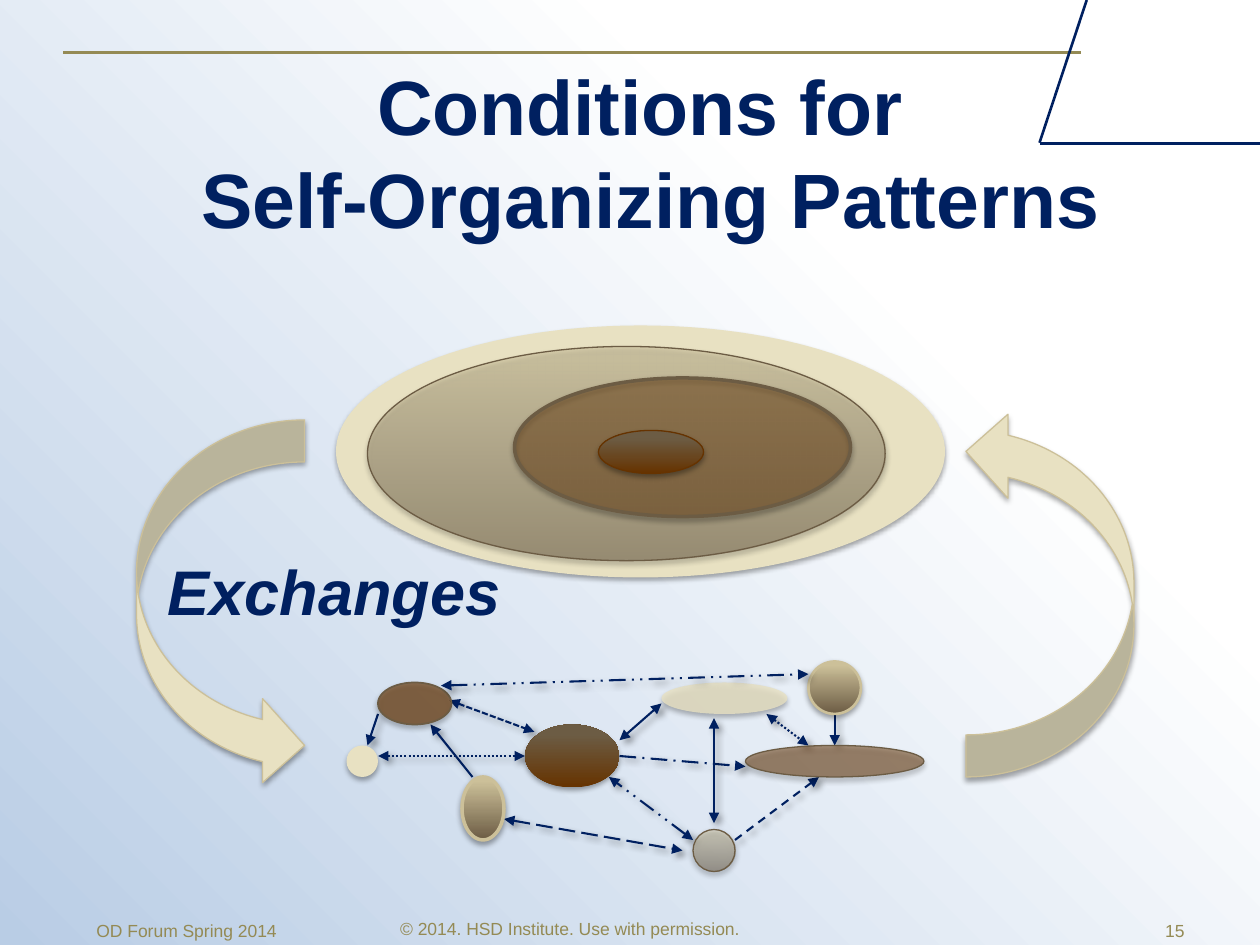
from pptx import Presentation
from pptx.dml.color import RGBColor
from pptx.enum.dml import MSO_LINE
from pptx.enum.shapes import MSO_CONNECTOR, MSO_SHAPE
from pptx.enum.text import MSO_ANCHOR, MSO_AUTO_SIZE, PP_ALIGN
from pptx.oxml import parse_xml
from pptx.oxml.ns import nsdecls
from pptx.util import Inches, Pt

OVAL, ARROW = MSO_SHAPE.OVAL, MSO_SHAPE.CURVED_RIGHT_ARROW
STRAIGHT = MSO_CONNECTOR.STRAIGHT
LEFT, CENTER, RIGHT = PP_ALIGN.LEFT, PP_ALIGN.CENTER, PP_ALIGN.RIGHT
TOP, MIDDLE = MSO_ANCHOR.TOP, MSO_ANCHOR.MIDDLE
SOLID, DASH, LONG = MSO_LINE.SOLID, MSO_LINE.DASH, MSO_LINE.LONG_DASH
DOT, SHORT = MSO_LINE.ROUND_DOT, MSO_LINE.SQUARE_DOT
LONG_DOT, LONG_DOT_DOT = MSO_LINE.LONG_DASH_DOT, MSO_LINE.DASH_DOT_DOT

COLORS = {
    "navy": "002060", "olive": "948A54", "cream": "E8E1C2", "sand": "CCC099",
    "taupe": "6C5C44", "brown": "663300", "white": "FFFFFF", "sky": "B9CDE5",
    "mist": "E1E8F5", "black": "000000",
}
# Each fill: angle in degrees, then stops of position, colour and opacity in percent.
FILLS = {
    "background": (135, [(0, "white", 100), (29, "white", 100), (100, "sky", 100)]),
    "cream": (0, [(0, "cream", 100)]),
    "pale cream": (0, [(0, "cream", 80)]),
    "light brown": (0, [(0, "brown", 40)]),
    "mid brown": (0, [(0, "brown", 65)]),
    "soft brown": (0, [(0, "brown", 50)]),
    "glass": (270, [(0, "taupe", 50), (94, "sand", 50)]),
    "silver": (270, [(0, "taupe", 50), (94, "sand", 50), (100, "mist", 100)]),
    "bronze": (270, [(0, "taupe", 100), (94, "sand", 100)]),
    "chestnut": (270, [(0, "brown", 100), (84, "taupe", 100)]),
}
# Shadows: opacity in percent, blur and distance in points, angle in degrees.
SHAPE_SHADOW = (35, 3.1, 1.8, 90)
LINE_SHADOW = (40, 4, 3, 45)
CELL = Inches(1) / 12  # the slide is a grid of 120 columns and 90 rows


def drawing_xml(kind, angle=0, stops=(), shadow=None):
    """Return a fill ("fill") or an effect list ("effects") as an XML element."""
    if kind == "effects":
        content = ""
        if shadow:
            opacity, blur, distance, direction = shadow
            content = (
                f'<a:outerShdw blurRad="{Pt(blur)}" dist="{Pt(distance)}" '
                f'dir="{direction * 60000}" rotWithShape="0">'
                f'<a:srgbClr val="{COLORS["black"]}"><a:alpha val="{opacity * 1000}"/>'
                "</a:srgbClr></a:outerShdw>")
        return parse_xml(f'<a:effectLst {nsdecls("a")}>{content}</a:effectLst>')
    colors = [f'<a:srgbClr val="{COLORS[name]}"><a:alpha val="{opacity * 1000}"/></a:srgbClr>'
              for _, name, opacity in stops]
    if len(stops) == 1:
        return parse_xml(f'<a:solidFill {nsdecls("a")}>{colors[0]}</a:solidFill>')
    marks = "".join(f'<a:gs pos="{stop[0] * 1000}">{color}</a:gs>'
                    for stop, color in zip(stops, colors))
    return parse_xml(
        f'<a:gradFill {nsdecls("a")} rotWithShape="1"><a:gsLst>{marks}</a:gsLst>'
        f'<a:lin ang="{angle * 60000}" scaled="0"/></a:gradFill>')


def write_text(shape, text, box, size, color, align=LEFT, anchor=MIDDLE,
               bold=False, italic=False):
    shape.left, shape.top, shape.width, shape.height = [round(n * CELL) for n in box]
    frame = shape.text_frame
    frame.word_wrap = True
    frame.auto_size = MSO_AUTO_SIZE.NONE
    frame.vertical_anchor = anchor
    frame.text = text
    paragraph = frame.paragraphs[0]
    paragraph.alignment = align
    for run in paragraph.runs:
        run.font.name, run.font.size = "Arial", Pt(size)
        run.font.bold, run.font.italic = bold, italic
        run.font.color.rgb = RGBColor.from_string(COLORS[color])


presentation = Presentation()
presentation.slide_width, presentation.slide_height = Inches(10), Inches(7.5)
slide = presentation.slides.add_slide(presentation.slide_layouts[5])

slide.background.fill.solid()
plain_fill = slide.element.find(".//{*}bgPr/{*}solidFill")
plain_fill.getparent().replace(plain_fill, drawing_xml("fill", *FILLS["background"]))

# Lines: start, end, colour, width, dash, arrowheads ("", "end" or "both"), shadow
frame_lines = [
    (start, end, color, width, SOLID, "", None) for start, end, color, width in [
        ((6, 5), (103, 5), "olive", 2.25),
        ((103.5, 0), (99, 13.6), "navy", 1.5),
        ((120, 13.7), (99, 13.7), "navy", 1.5),
    ]]
exchange_lines = [
    (start, end, "navy", 1.2, dash, heads, LINE_SHADOW) for start, end, dash, heads in [
        ((45, 74), (41, 69), SOLID, "end"),
        ((36, 68), (35, 71), SOLID, "end"),
        ((48, 78), (65, 81), LONG, "both"),
        ((73, 68), (77, 71), DOT, "both"),
        ((42.8, 66.7), (50.9, 69.7), SHORT, "both"),
        ((59, 72), (71, 73), LONG_DOT, "end"),
        ((68, 78.4), (68, 68.4), SOLID, "both"),
        ((70, 80), (78, 74), DASH, "end"),
        ((59, 70.5), (63, 67), SOLID, "both"),
        ((79.5, 68), (79.5, 71), SOLID, "end"),
        ((66, 80), (58, 74), LONG_DOT_DOT, "both"),
        ((36, 72), (50, 72), DOT, "both"),
        ((42, 65.3), (77, 64.2), LONG_DOT_DOT, "both"),
    ]]
# Shapes: preset, box, fill, line colour, line width, flipped
containers = [
    (ARROW, (13, 40, 16, 35), "cream", "sand", 0.75, False),
    (OVAL, (32, 31, 58, 24), "cream", None, 0, False),
    (OVAL, (35, 33, 49.3, 20.4), "glass", "taupe", 0.75, False),
    (OVAL, (49, 36, 32, 13.2), "light brown", "taupe", 2, False),
    (OVAL, (57, 41, 10, 4.1), "chestnut", "brown", 0.75, False),
    (ARROW, (92, 39, 16, 35), "cream", "sand", 0.75, True),
]
agents = [
    (OVAL, (33, 71, 3, 3), "cream", None, 0, False),
    (OVAL, (36, 65, 7, 4), "mid brown", "taupe", 1, False),
    (OVAL, (44, 74, 4, 6), "bronze", "sand", 2, False),
    (OVAL, (50, 69, 9, 6), "chestnut", None, 0, False),
    (OVAL, (63, 65, 12, 3), "pale cream", None, 0, False),
    (OVAL, (71, 71, 17, 3), "soft brown", "taupe", 0.75, False),
    (OVAL, (66, 79, 4, 4), "silver", "taupe", 0.75, False),
    (OVAL, (77, 63, 5, 5), "bronze", "sand", 1.5, False),
]

# Back to front: frame, containers, connections, agents, the one line above the agents
for item in frame_lines + containers + exchange_lines[:-1] + agents + exchange_lines[-1:]:
    if item in containers or item in agents:
        preset, box, fill, line_color, width, flipped = item
        shape = slide.shapes.add_shape(preset, *[round(n * CELL) for n in box])
        shape.fill.solid()
        properties = shape.element.spPr
        plain_fill = properties.find("{*}solidFill")
        properties.replace(plain_fill, drawing_xml("fill", *FILLS[fill]))
        if flipped:
            properties.xfrm.set("flipH", "1")
            properties.xfrm.set("flipV", "1")
        shadow = SHAPE_SHADOW
    else:
        start, end, line_color, width, dash, heads, shadow = item
        shape = slide.shapes.add_connector(STRAIGHT, *[round(n * CELL) for n in start + end])
        shape.line.dash_style = dash
        properties = shape.element.spPr
    if line_color:
        shape.line.color.rgb = RGBColor.from_string(COLORS[line_color])
        shape.line.width = Pt(width)
    else:
        shape.line.fill.background()
    if item in exchange_lines:
        for tag in ("headEnd", "tailEnd") if heads == "both" else ("tailEnd",):
            properties.find("{*}ln").append(
                parse_xml(f'<a:{tag} {nsdecls("a")} type="triangle"/>'))
    properties.append(drawing_xml("effects", shadow=shadow))

write_text(slide.shapes.title, "Conditions for \vSelf-Organizing Patterns",
           (2, 6.7, 120, 15.4), 44, "navy", align=CENTER, bold=True)
for text, box, style in [
    ("Exchanges", (14.8, 52, 53, 23),
     {"size": 36, "color": "navy", "anchor": TOP, "bold": True, "italic": True}),
    ("© 2014. HSD Institute. Use with permission. ", (6, 86, 97, 4.8),
     {"size": 10, "color": "olive", "align": CENTER}),
    ("15", (86, 86.2, 28, 4.8), {"size": 10, "color": "olive", "align": RIGHT}),
    ("OD Forum Spring 2014", (8, 86.2, 28, 4.8), {"size": 10, "color": "olive"}),
]:
    write_text(slide.shapes.add_textbox(0, 0, 0, 0), text, box, **style)

presentation.save("out.pptx")
